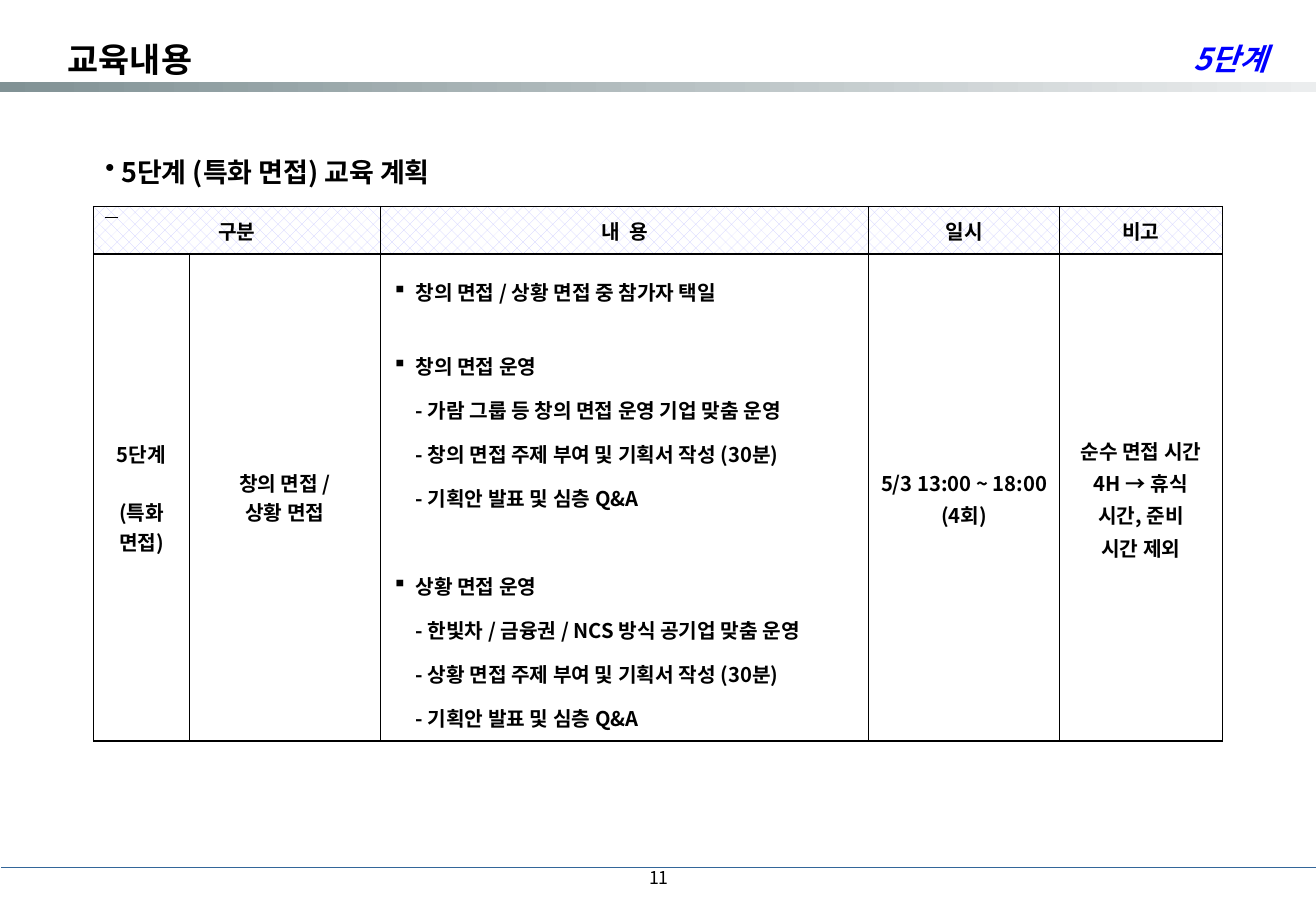
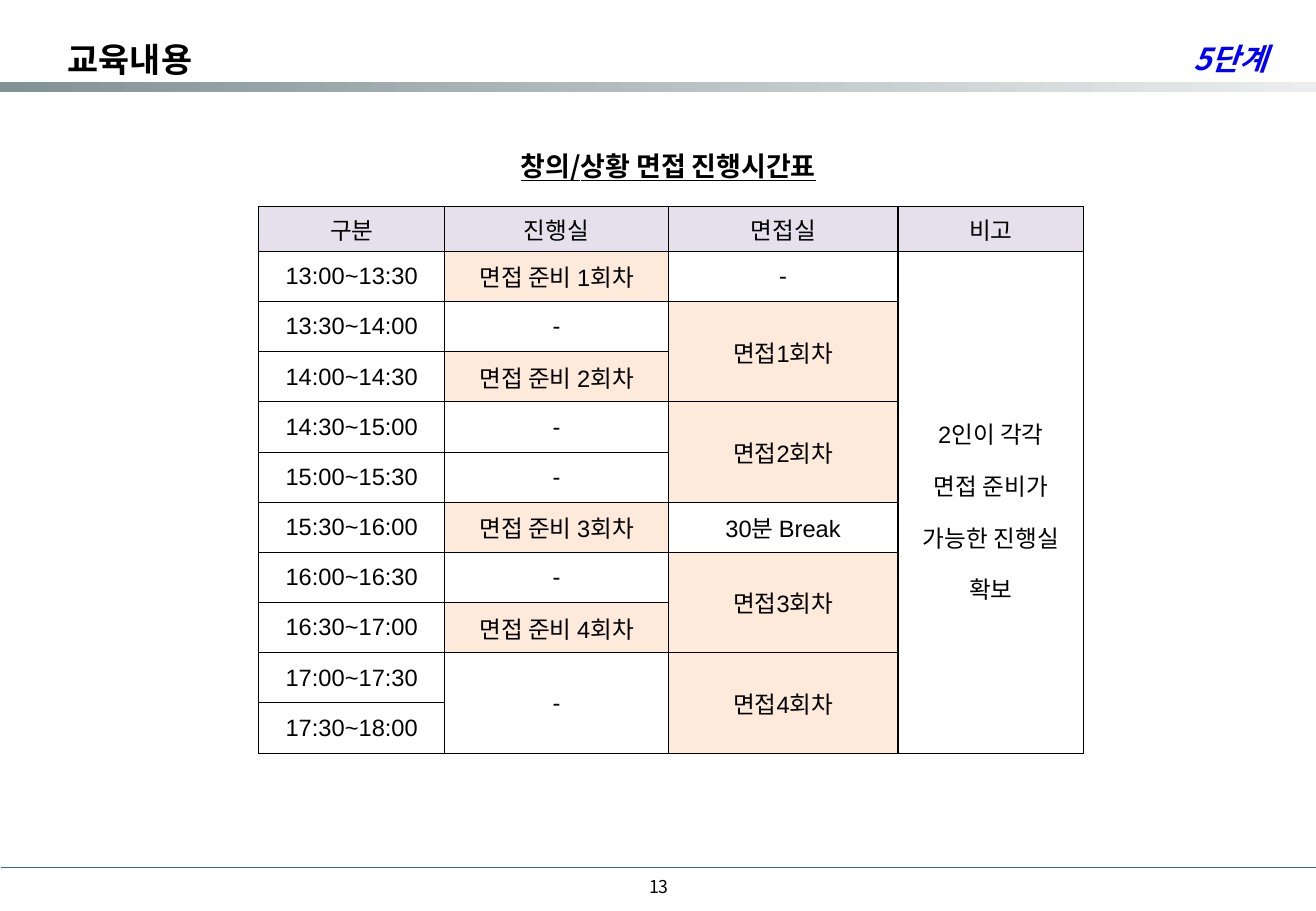
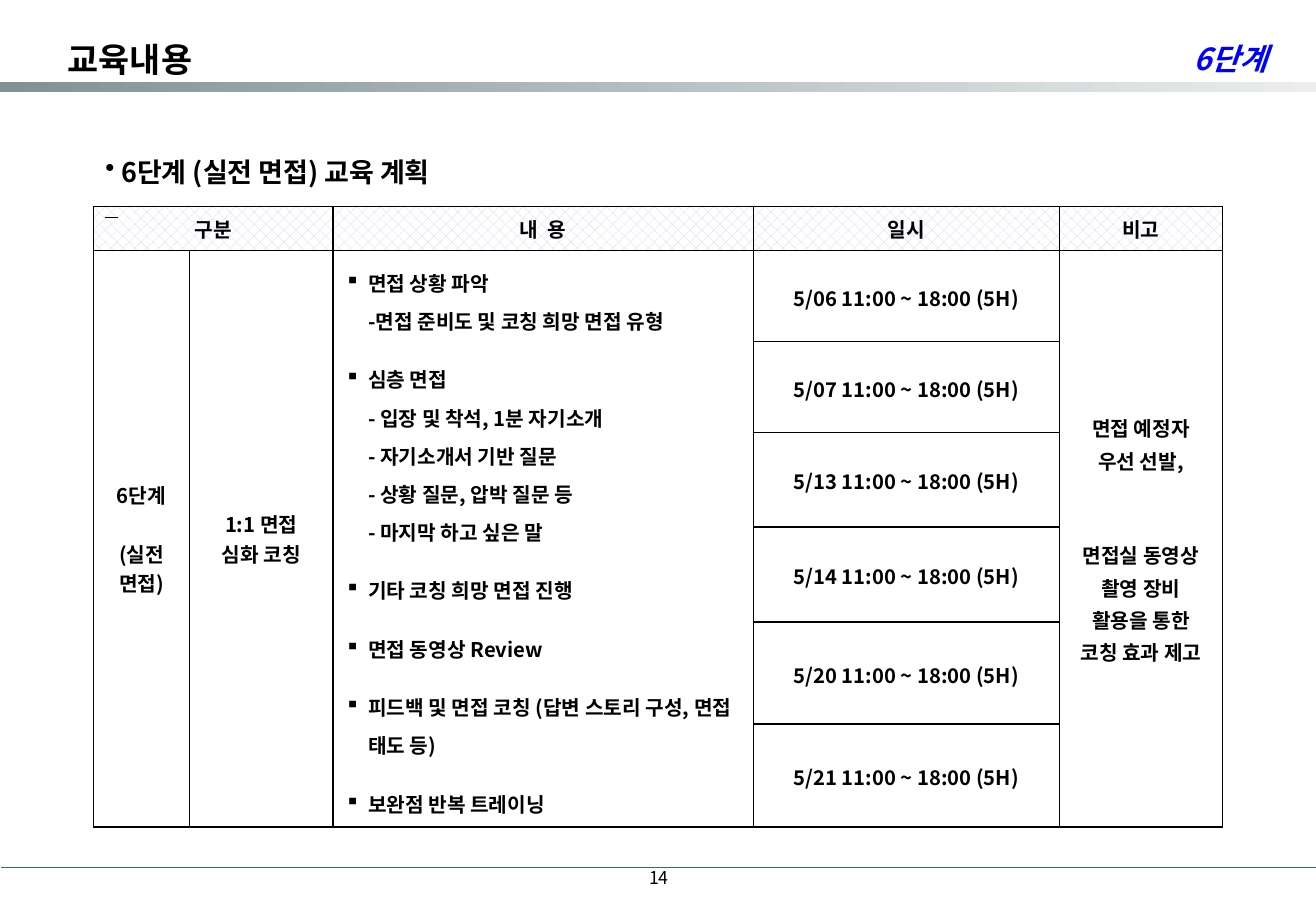
from copy import deepcopy
from dataclasses import dataclass
from itertools import chain, product, repeat

from lxml.etree import SubElement
from pptx import Presentation
from pptx.dml.color import RGBColor
from pptx.enum.dml import MSO_PATTERN
from pptx.enum.shapes import MSO_CONNECTOR, MSO_SHAPE
from pptx.enum.text import MSO_ANCHOR, PP_ALIGN
from pptx.oxml.ns import qn
from pptx.util import Inches, Pt


@dataclass(frozen=True)
class Theme:
    font: str = "Noto Sans CJK KR"
    schedule_font: str = "Arial"
    ink: str = "000000"
    paper: str = "FFFFFF"
    stage: str = "0000FF"
    band_start: str = "819295"
    band_end: str = "EBEDEE"
    footer: str = "336699"
    hatch: str = "CCCCFF"
    schedule_head: str = "E6E0EC"
    session: str = "FDEADA"
    title_size: float = 20
    stage_size: float = 18
    heading_size: float = 16
    schedule_size: float = 14
    plan_size: float = 12
    page_size: float = 10.5


theme = Theme()
deck = Presentation()
deck.slide_width, deck.slide_height = Inches(10.83), Inches(7.5)
blank = deck.slide_layouts[6]
for placeholder in list(blank.placeholders):
    placeholder.element.getparent().remove(placeholder.element)


def area(left, top, width, height):
    sides = (deck.slide_width, deck.slide_height) * 2
    return [round(side * share / 100) for side, share in zip(sides, (left, top, width, height))]


def write(frame, paragraphs, size=theme.plan_size, font=theme.font, color=theme.ink,
          bold=False, italic=False, underline=False, align=PP_ALIGN.LEFT,
          spacing=None, gaps=(0,), bullet=None, hang=0.19):
    frame.word_wrap = True
    for index, (text, gap) in enumerate(zip(paragraphs, chain(gaps, repeat(gaps[-1])))):
        paragraph = frame.add_paragraph() if index else frame.paragraphs[0]
        paragraph.text = text
        paragraph.alignment = align
        paragraph.space_before = Pt(gap)
        if spacing:
            paragraph.line_spacing = spacing
        if bullet:
            properties = paragraph._p.get_or_add_pPr()
            properties.set("marL", str(Inches(hang)))
            properties.set("indent", str(-Inches(hang)))
            SubElement(properties, qn("a:buChar"), char=bullet)
        for run in paragraph.runs:
            run.font.size, run.font.name = Pt(size), font
            run.font.bold, run.font.italic, run.font.underline = bold, italic, underline
            run.font.color.rgb = RGBColor.from_string(color)
            SubElement(run.font._element, qn("a:ea"), typeface=theme.font)
        for line_break in paragraph._p.findall(qn("a:br")):
            line_break.append(deepcopy(paragraph.runs[0].font._element))


center = dict(align=PP_ALIGN.CENTER)
plan = dict(bold=True)
plan_center = plan | center
plan_note = plan_center | dict(spacing=1.1)
schedule = center | dict(size=theme.schedule_size, font=theme.schedule_font)
plan_heading = dict(area=(7.11, 16.4, 31.3, 8.53), format=dict(bold=True, bullet="•", hang=0.13))
schedule_heading = dict(area=(24.84, 15.73, 51.89, 4.93),
                        format=center | dict(bold=True, underline=True))

plan_head = [
    (0, column, 1, span, None, [label], plan_center)
    for column, span, label in [(0, 2, "구분"), (2, 1, "내  용"), (3, 1, "일시"), (4, 1, "비고")]
]

special_cells = plan_head + [
    (1, 0, 1, 1, theme.paper, ["5단계", "(특화\n면접)"], plan_center | dict(gaps=(0, 17.5))),
    (1, 1, 1, 1, theme.paper, ["창의 면접 /", "상황 면접"], plan_center),
    (1, 2, 1, 1, theme.paper, [
        "창의 면접 / 상황 면접 중 참가자 택일",
        "창의 면접 운영\n- 가람 그룹 등 창의 면접 운영 기업 맞춤 운영\n"
        "- 창의 면접 주제 부여 및 기획서 작성 (30분)\n- 기획안 발표 및 심층 Q&A",
        "상황 면접 운영\n- 한빛차 / 금융권 / NCS 방식 공기업 맞춤 운영\n"
        "- 상황 면접 주제 부여 및 기획서 작성 (30분)\n- 기획안 발표 및 심층 Q&A",
    ], plan | dict(spacing=1.5, gaps=(0, 17.5, 26), bullet="▪")),
    (1, 3, 1, 1, theme.paper, ["5/3 13:00 ~ 18:00 (4회)"], plan_note),
    (1, 4, 1, 1, theme.paper, ["순수 면접 시간 4H → 휴식\n시간, 준비\n시간 제외"], plan_note),
]

schedule_cells = [
    (0, column, 1, 1, theme.schedule_head, [label], schedule)
    for column, label in enumerate(["구분", "진행실", "면접실", "비고"])
]
clock = [f"{hour}:{minute}" for hour, minute in product(range(13, 19), ("00", "30"))]
for row, (start, end) in enumerate(zip(clock[:10], clock[1:]), 1):
    schedule_cells.append((row, 0, 1, 1, theme.paper, [f"{start}~{end}"], schedule))
preparation_rounds = {1: 1, 3: 2, 6: 3, 8: 4}
for row in range(1, 10):
    turn = preparation_rounds.get(row)
    schedule_cells.append((row, 1, 2 if row == 9 else 1, 1,
                           theme.session if turn else theme.paper,
                           [f"면접 준비 {turn}회차" if turn else "-"], schedule))
for turn, row in enumerate((2, 4, 7, 9), 1):
    schedule_cells.append((row, 2, 2, 1, theme.session, [f"면접{turn}회차"], schedule))
schedule_cells += [
    (1, 2, 1, 1, theme.paper, ["-"], schedule),
    (6, 2, 1, 1, theme.paper, ["30분 Break"], schedule),
    (1, 3, 10, 1, theme.paper, ["2인이 각각\n면접 준비가\n가능한 진행실\n확보"],
     schedule | dict(spacing=1.5)),
]

practice_cells = plan_head + [
    (1, 0, 6, 1, theme.paper, ["6단계", "(실전 면접)"], plan_center | dict(gaps=(0, 17.5))),
    (1, 1, 6, 1, theme.paper, ["1:1 면접\n심화 코칭"], plan_center),
    (1, 2, 6, 1, theme.paper, [
        "면접 상황 파악\n-면접 준비도 및 코칭 희망 면접 유형",
        "심층 면접\n- 입장 및 착석, 1분 자기소개\n- 자기소개서 기반 질문\n"
        "- 상황 질문, 압박 질문 등\n- 마지막 하고 싶은 말",
        "기타 코칭 희망 면접 진행",
        "면접 동영상 Review",
        "피드백 및 면접 코칭 (답변 스토리 구성, 면접 태도 등)",
        "보완점 반복 트레이닝",
    ], plan | dict(spacing=1.3, gaps=(0, 12), bullet="▪")),
    (1, 4, 6, 1, theme.paper, ["면접 예정자\n우선 선발,", "면접실 동영상 촬영 장비 활용을 통한 코칭 효과 제고"],
     plan_note | dict(gaps=(0, 37))),
]
for row, day in enumerate(["06", "07", "13", "14", "20", "21"], 1):
    practice_cells.append((row, 3, 1, 1, theme.paper, [f"5/{day} 11:00 ~ 18:00 (5H)"], plan_note))

pages = [
    dict(number="11", number_top=93.6, stage="5단계", heading="5단계 (특화 면접) 교육 계획",
         heading_style=plan_heading, area=(7.11, 22.67, 85.78, 58.67), border=1, inset=0.1,
         columns=(79, 157, 402, 157, 134), rows=(39, 401), cells=special_cells),
    dict(number="13", number_top=94.67, stage="5단계", heading="창의/상황 면접 진행시간표",
         heading_style=schedule_heading, area=(19.67, 22.67, 62.7, 60), border=0.75, inset=0.08,
         columns=(153, 184, 189, 153), rows=(37,) + (41.3,) * 10, cells=schedule_cells),
    dict(number="14", number_top=93.6, stage="6단계", heading="6단계 (실전 면접) 교육 계획",
         heading_style=plan_heading, area=(7.11, 22.67, 85.78, 68.13), border=1, inset=0.1,
         columns=(79, 118, 346, 252, 134), rows=(36, 75, 75, 78, 78, 84, 85), cells=practice_cells),
]

for page in pages:
    slide = deck.slides.add_slide(blank)
    shapes = slide.shapes

    if page is pages[0]:
        band = shapes.add_shape(MSO_SHAPE.RECTANGLE, *area(0, 9, 100, 1.1))
        band.shadow.inherit = False
        band.line.fill.background()
        band.fill.gradient()
        band.fill.gradient_angle = 0
        for stop, color in zip(band.fill.gradient_stops, (theme.band_start, theme.band_end)):
            stop.color.rgb = RGBColor.from_string(color)
        left, top, right, bottom = area(0.1, 95.2, 100, 95.2)
        footer = shapes.add_connector(MSO_CONNECTOR.STRAIGHT, left, top, right, bottom)
        footer.line.color.rgb = RGBColor.from_string(theme.footer)
        footer.line.width = Pt(0.75)
        SubElement(footer.element.spPr, qn("a:effectLst"))
        for shared in (band, footer):
            blank.shapes.element.append(shared.element)

    grid = shapes.add_table(len(page["rows"]), len(page["columns"]), *area(*page["area"])).table
    grid.first_row = grid.horz_banding = False
    width, height = area(*page["area"])[2:]
    for column, share in zip(grid.columns, page["columns"]):
        column.width = round(width * share / sum(page["columns"]))
    for row, share in zip(grid.rows, page["rows"]):
        row.height = round(height * share / sum(page["rows"]))
    for cell in grid.iter_cells():
        cell.margin_left = cell.margin_right = Inches(page["inset"])
        cell.margin_top = cell.margin_bottom = Inches(0.04)
        cell.vertical_anchor = MSO_ANCHOR.MIDDLE
        for side in ("lnL", "lnR", "lnT", "lnB"):
            edge = SubElement(cell._tc.tcPr, qn(f"a:{side}"), w=str(Pt(page["border"])))
            SubElement(SubElement(edge, qn("a:solidFill")), qn("a:srgbClr"), val=theme.ink)
    for row, column, row_span, column_span, fill, paragraphs, format in page["cells"]:
        cell = grid.cell(row, column)
        if row_span * column_span > 1:
            cell.merge(grid.cell(row + row_span - 1, column + column_span - 1))
        if fill:
            cell.fill.solid()
            cell.fill.fore_color.rgb = RGBColor.from_string(fill)
        else:
            cell.fill.patterned()
            cell.fill.pattern = MSO_PATTERN.PERCENT_30
            cell.fill.fore_color.rgb = RGBColor.from_string(theme.hatch)
            cell.fill.back_color.rgb = RGBColor.from_string(theme.paper)
        write(cell.text_frame, paragraphs, **format)

    heading_style = page["heading_style"]
    heading = shapes.add_textbox(*area(*heading_style["area"]))
    write(heading.text_frame, [page["heading"]], size=theme.heading_size, **heading_style["format"])
    if heading_style is plan_heading:
        left, top, right, bottom = area(7.98, 23.9, 8.97, 23.9)
        dash = shapes.add_connector(MSO_CONNECTOR.STRAIGHT, left, top, right, bottom)
        dash.line.color.rgb = RGBColor.from_string(theme.ink)
        dash.line.width = Pt(0.75)
        SubElement(dash.element.spPr, qn("a:effectLst"))

    for text, place, format in [
        ("교육내용", (4.25, 3.07, 52.82, 6.27),
         dict(size=theme.title_size, bold=True, spacing=1.1)),
        (page["stage"], (64.54, 3.07, 32.69, 6.27),
         dict(size=theme.stage_size, bold=True, italic=True, color=theme.stage,
              align=PP_ALIGN.RIGHT, spacing=1.1)),
        (page["number"], (28.35, page["number_top"], 23.36, 5.33),
         dict(size=theme.page_size, align=PP_ALIGN.RIGHT)),
    ]:
        label = shapes.add_textbox(*area(*place))
        label.text_frame.vertical_anchor = MSO_ANCHOR.MIDDLE
        write(label.text_frame, [text], **format)

deck.save("out.pptx")
